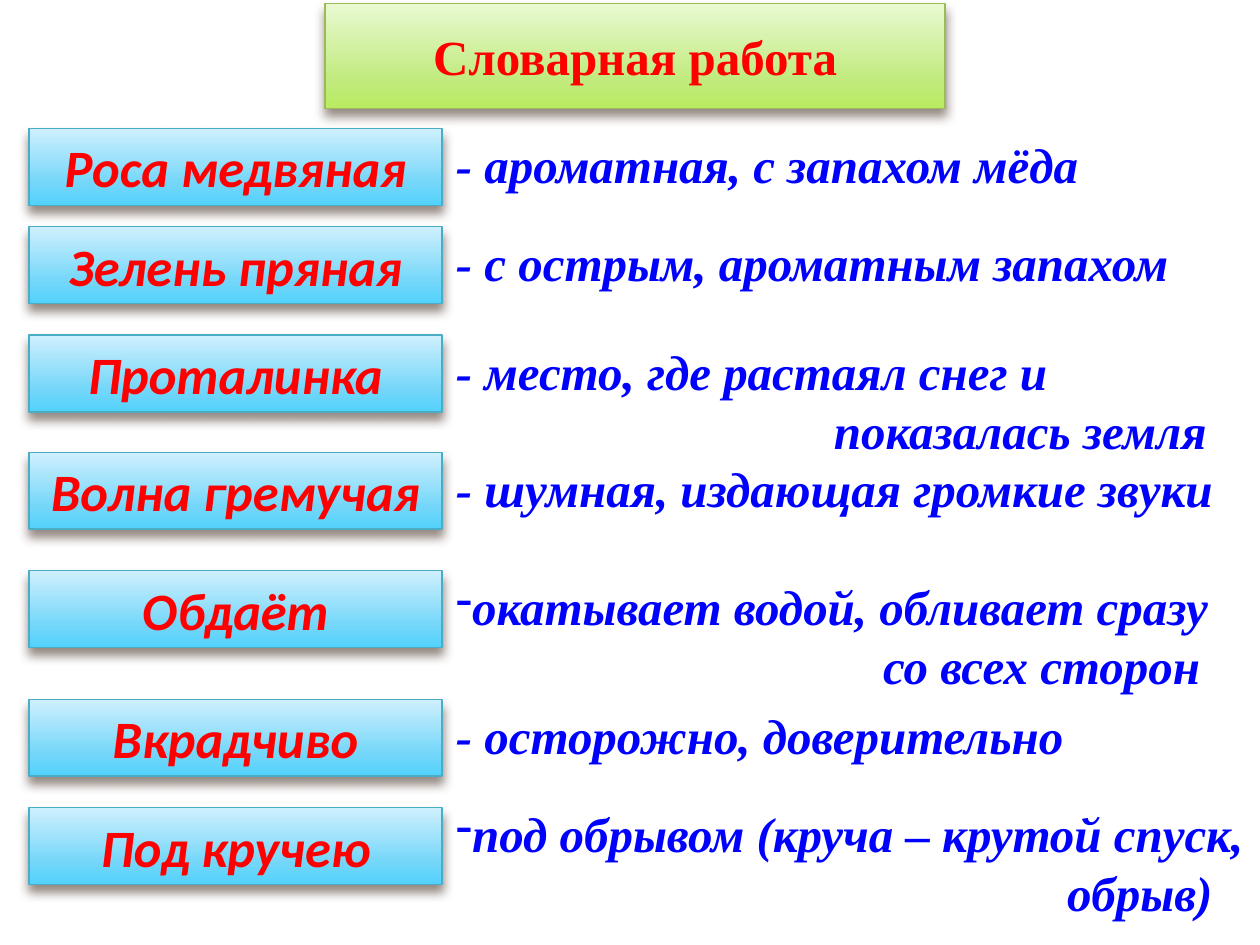
from dataclasses import dataclass

from copy import deepcopy
from lxml import etree
from pptx import Presentation
from pptx.dml.color import RGBColor
from pptx.enum.shapes import MSO_SHAPE
from pptx.enum.text import MSO_ANCHOR, MSO_AUTO_SIZE, PP_ALIGN
from pptx.oxml.ns import qn
from pptx.util import Inches, Pt

RECT = MSO_SHAPE.RECTANGLE
CENTER, LEFT = PP_ALIGN.CENTER, PP_ALIGN.LEFT
MIDDLE, TOP = MSO_ANCHOR.MIDDLE, MSO_ANCHOR.TOP
GROW = MSO_AUTO_SIZE.SHAPE_TO_FIT_TEXT

COLORS = {"red": "FF0000", "blue": "0000FF", "shade": "4E3B30",
          "green": "9BBB59", "cyan": "4BACC6"}
BLENDS = {"green": ("E9F9D2", "C1EB7E", "B8EB61"),
          "cyan": ("CFF0FE", "73D6F9", "52D2FC")}
STOPS = (0, 0.72, 1)

# Text formats
HEAD = {"name": "Times New Roman", "size": Pt(28), "bold": True, "italic": False}
TERM = {"name": "Calibri", "size": Pt(30), "bold": True, "italic": True}
SENSE = {**HEAD, "italic": True}

# Two columns: left edge and width in inches
TERM_X, TERM_W, TERM_H = 0.23, 3.28, 0.61
SENSE_X, SENSE_W = 3.52, 6.48
LINE_H, PAIR_H = 0.57, 1.04


@dataclass
class Entry:
    top: float
    term: str
    sense: str
    more: str = ""        # second line of the meaning
    indent: float = 0     # indent of the second line
    bullet: bool = False
    lift: float = 0       # how far the meaning sits above the term


ENTRIES = [
    Entry(1.02, "Роса медвяная", "- ароматная, с запахом мёда"),
    Entry(1.8, "Зелень пряная", "- с острым, ароматным запахом"),
    Entry(2.66, "Проталинка", "- место, где растаял снег и", "показалась земля", 3.0),
    Entry(3.59, "Волна гремучая", "- шумная, издающая громкие звуки"),
    Entry(4.53, "Обдаёт", "окатывает водой, обливает сразу", "со всех сторон", 3.39, True),
    Entry(5.55, "Вкрадчиво", "- осторожно, доверительно"),
    Entry(6.41, "Под кручею", "под обрывом (круча – крутой спуск,", "обрыв)", 4.85, True, 0.08),
]


def place(shape, x: float, y: float, w: float, h: float) -> None:
    shape.left, shape.top, shape.width, shape.height = map(Inches, (x, y, w, h))


def write(para, text: str, style: dict, color: str, align=LEFT) -> None:
    para.alignment = align
    run = para.add_run()
    run.text = text
    for key, value in style.items():
        setattr(run.font, key, value)
    run.font.color.rgb = RGBColor.from_string(COLORS[color])


def paint(shape, hue: str) -> None:
    """Give a box its three-stop gradient, outline and soft shadow."""
    fill = shape.fill
    fill.gradient()
    fill.gradient_angle = 270
    props = shape._element.spPr
    stops = props.find(qn("a:gradFill")).find(qn("a:gsLst"))
    stops.insert(1, deepcopy(stops[0]))
    for stop, pos, color in zip(fill.gradient_stops, STOPS, BLENDS[hue]):
        stop.position = pos
        stop.color.rgb = RGBColor.from_string(color)
    shape.line.color.rgb = RGBColor.from_string(COLORS[hue])
    shape.line.width = Pt(0.79)

    shape.shadow.inherit = False
    cast = etree.SubElement(props.find(qn("a:effectLst")), qn("a:outerShdw"),
                            blurRad=str(Pt(6)), dist=str(Pt(4)),
                            dir="5400000", rotWithShape="0")
    tint = etree.SubElement(cast, qn("a:srgbClr"), val=COLORS["shade"])
    etree.SubElement(tint, qn("a:alpha"), val="60000")


def label(shape, text: str, style: dict, hue: str) -> None:
    paint(shape, hue)
    frame = shape.text_frame
    frame.word_wrap = True
    frame.auto_size = GROW
    frame.vertical_anchor = MIDDLE
    write(frame.paragraphs[0], text, style, "red", CENTER)


def explain(slide, entry: Entry) -> None:
    height = PAIR_H if entry.more else LINE_H
    box = slide.shapes.add_textbox(0, 0, 0, 0)
    place(box, SENSE_X, entry.top - entry.lift, SENSE_W, height)
    frame = box.text_frame
    frame.word_wrap = True
    frame.auto_size = GROW
    frame.vertical_anchor = TOP
    first = frame.paragraphs[0]
    if entry.bullet:
        props = first._p.get_or_add_pPr()
        etree.SubElement(props, qn("a:buFontTx"))
        etree.SubElement(props, qn("a:buChar"), char="-")
    write(first, entry.sense, SENSE, "blue")
    if entry.more:
        second = frame.add_paragraph()
        second._p.get_or_add_pPr().set("marL", str(Inches(entry.indent)))
        write(second, entry.more, SENSE, "blue")


def main() -> None:
    deck = Presentation()
    deck.slide_width, deck.slide_height = Inches(10), Inches(7.5)
    slide = deck.slides.add_slide(deck.slide_layouts[5])

    # Title
    title = slide.shapes.title
    place(title, 2.58, 0.16, 4.92, LINE_H)
    label(title, "Словарная работа", HEAD, "green")

    # Terms and their meanings
    for entry in ENTRIES:
        box = slide.shapes.add_shape(RECT, 0, 0, 0, 0)
        place(box, TERM_X, entry.top, TERM_W, TERM_H)
        label(box, entry.term, TERM, "cyan")
        explain(slide, entry)

    deck.save("out.pptx")


if __name__ == "__main__":
    main()
